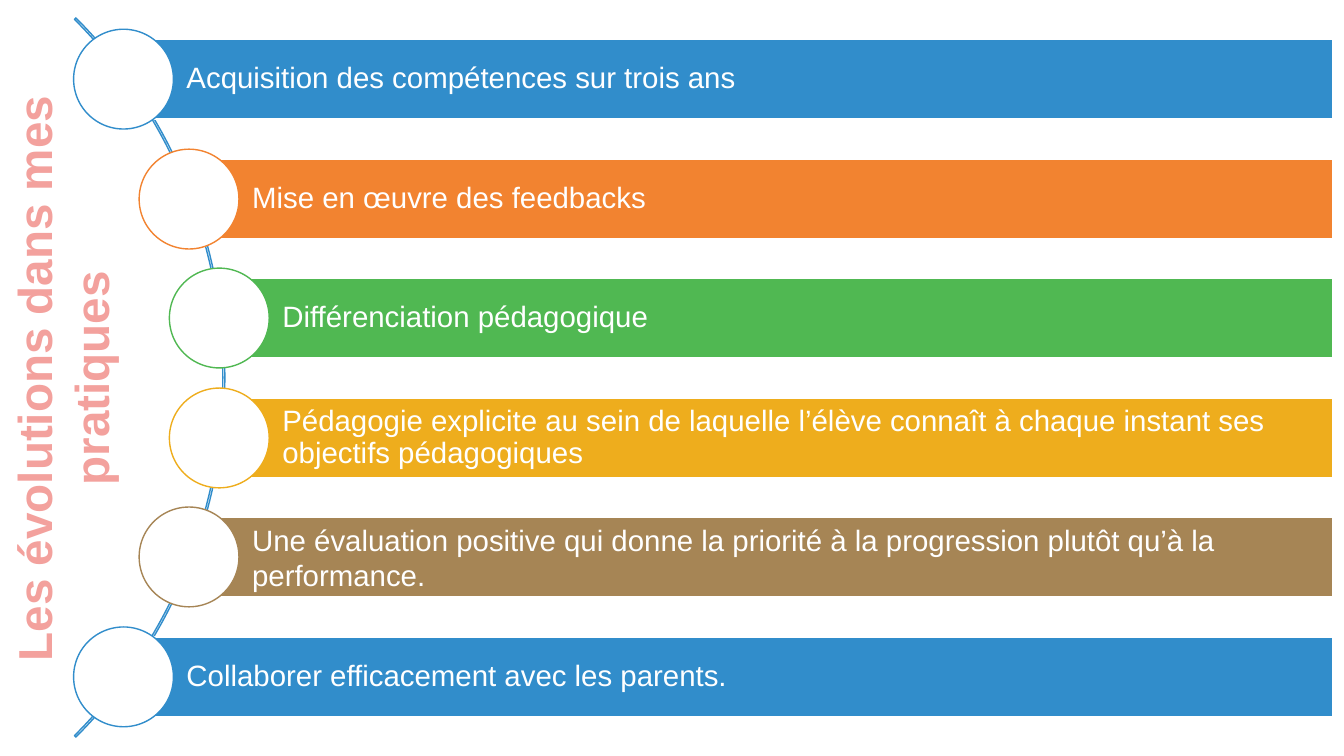
"""Build the slide listing six changes in teaching practice along an arc."""
from pptx import Presentation
from pptx import util as u
from pptx.dml.color import RGBColor
from pptx.enum import shapes, text

PX = 9144
COLORS = {
    "white": "FFFFFF", "title": "F3A19D", "blue": "318DCB", "orange": "F28330",
    "green": "50B852", "yellow": "EEAD1D", "brown": "A68555",
}
PRACTICES = [
    ("Acquisition des compétences sur trois ans", "blue", 122, 0.9),
    ("Mise en œuvre des feedbacks", "orange", 187, 0.9),
    ("Différenciation pédagogique", "green", 217, 0.9),
    ("Pédagogie explicite au sein de laquelle l’élève connaît à chaque instant "
     "ses objectifs pédagogiques", "yellow", 217, 0.9),
    ("Une évaluation positive qui donne la priorité à la progression plutôt "
     "qu’à la performance.", "brown", 187, 1.0),
    ("Collaborer efficacement avec les parents.", "blue", 122, 0.9),
]
FIRST_TOP, STEP = 39, 118.6
BAR_RIGHT, BAR_HEIGHT, CIRCLE = 1322, 79, 99


def px(*lengths):
    """Turn px lengths into EMU."""
    return [u.Emu(length * PX) for length in lengths]


def rgb(name):
    """Look up a named colour."""
    return RGBColor.from_string(COLORS[name])


def add_run(paragraph, wording, size, color, bold=False):
    """Add one formatted run to a paragraph."""
    run = paragraph.add_run()
    run.text = wording
    run.font.name = "Arial"
    run.font.size = u.Pt(size)
    run.font.bold = bold
    run.font.color.rgb = rgb(color)


def add_outlined(slide, preset, box, fill, line):
    """Add a preset shape with a thin outline and an optional fill."""
    outlined = slide.shapes.add_shape(preset, *px(*box))
    outlined.shadow.inherit = False
    if fill:
        outlined.fill.solid()
        outlined.fill.fore_color.rgb = rgb(fill)
    else:
        outlined.fill.background()
    outlined.line.color.rgb = rgb(line)
    outlined.line.width = u.Pt(1)
    return outlined


def set_title(slide, wording):
    """Turn the title placeholder upright along the left edge."""
    title = slide.shapes.title
    title.left, title.top, title.width, title.height = px(-313, 313, 750, 125)
    title.rotation = 270
    frame = title.text_frame
    frame.word_wrap = True
    frame.auto_size = text.MSO_AUTO_SIZE.NONE
    frame.vertical_anchor = text.MSO_ANCHOR.TOP
    frame.paragraphs[0].alignment = text.PP_ALIGN.CENTER
    add_run(frame.paragraphs[0], wording, 34, "title", bold=True)


def add_arc(slide):
    """Add the thin arc that links the circles."""
    arc = add_outlined(slide, shapes.MSO_SHAPE.BLOCK_ARC,
                       (-786, -130, 1009, 1009), None, "blue")
    for index, value in enumerate((189, 27, 0.002)):
        arc.adjustments[index] = value


def add_practice(slide, top, wording, color, left, spacing):
    """Add a labelled bar with its circle."""
    bar = add_outlined(slide, shapes.MSO_SHAPE.RECTANGLE,
                       (left, top, BAR_RIGHT - left, BAR_HEIGHT), color, "white")
    frame = bar.text_frame
    frame.word_wrap = True
    frame.vertical_anchor = text.MSO_ANCHOR.MIDDLE
    (frame.margin_left, frame.margin_top,
     frame.margin_right, frame.margin_bottom) = px(63, 6, 6, 6)
    label = frame.paragraphs[0]
    label.alignment = text.PP_ALIGN.LEFT
    label.line_spacing = spacing
    add_run(label, wording, 21, "white")
    add_outlined(slide, shapes.MSO_SHAPE.OVAL,
                 (left - CIRCLE // 2, top - 10, CIRCLE, CIRCLE), "white", color)


def main():
    """Build and save the slide."""
    deck = Presentation()
    deck.slide_width, deck.slide_height = px(1333, 750)
    slide = deck.slides.add_slide(deck.slide_layouts.get_by_name("Title Only"))
    set_title(slide, "Les évolutions dans mes pratiques")
    add_arc(slide)
    for row, practice in enumerate(PRACTICES):
        add_practice(slide, round(FIRST_TOP + STEP * row), *practice)
    deck.save("out.pptx")


if __name__ == "__main__":
    main()
